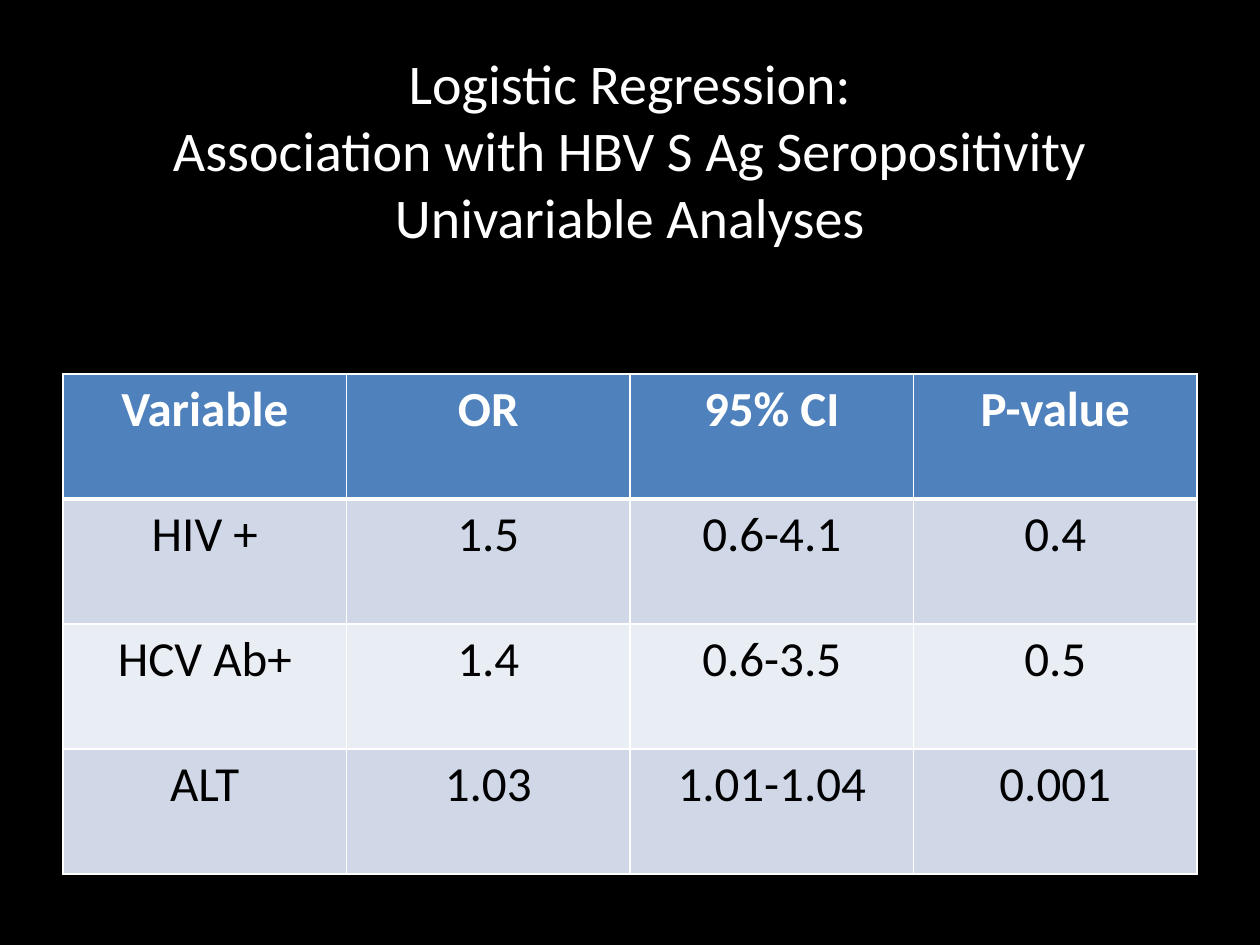
"""Build a slide with a table of univariable logistic regression results."""
import pptx
import pptx.dml.color
import pptx.enum.text
import pptx.oxml
import pptx.oxml.ns
import pptx.util

PX = 914400 / 126
ALIGN = pptx.enum.text.PP_ALIGN
ANCHOR = pptx.enum.text.MSO_ANCHOR


def px(n):
    return pptx.util.Emu(round(n * PX))


def rgb(value):
    return pptx.dml.color.RGBColor.from_string(value)


class Deck:
    font = "Calibri"
    white, black = "FFFFFF", "000000"
    header, bands = "4F81BD", ("D0D8E8", "E9EDF4")

    def __init__(self, width, height):
        self.prs = pptx.Presentation()
        self.prs.slide_width, self.prs.slide_height = px(width), px(height)

    def slide(self):
        self.s = self.prs.slides.add_slide(self.prs.slide_layouts[5])
        fill = self.s.background.fill
        fill.solid()
        fill.fore_color.rgb = rgb(self.black)

    def text(self, tf, text, size, color, bold=False):
        tf.text = text
        for p in tf.paragraphs:
            p.alignment = ALIGN.CENTER
            for r in p.runs:
                r.font.name, r.font.size = self.font, pptx.util.Pt(size)
                r.font.bold, r.font.color.rgb = bold, rgb(color)

    def title(self, text, left, top, width, height):
        sp = self.s.shapes.title
        sp.left, sp.top, sp.width, sp.height = map(px, (left, top, width, height))
        tf = sp.text_frame
        tf.word_wrap = True
        tf.auto_size = pptx.enum.text.MSO_AUTO_SIZE.NONE
        tf.vertical_anchor = ANCHOR.TOP
        tf.margin_top = px(10)
        self.text(tf, text, 32, self.white)

    def border(self, cell, side, points):
        ns = pptx.oxml.ns.nsdecls("a")
        cell._tc.get_or_add_tcPr().append(pptx.oxml.parse_xml(
            f'<a:ln{side} {ns} w="{pptx.util.Pt(points)}"><a:solidFill>'
            f'<a:srgbClr val="{self.white}"/></a:solidFill></a:ln{side}>'))

    def cell(self, cell, text, row):
        head = row == 0
        self.text(cell.text_frame, text, 28, self.white if head else self.black, head)
        heavy = {"T": row == 1, "B": head}
        for side in "LRTB":
            self.border(cell, side, 3 if heavy.get(side) else 1)
        cell.fill.solid()
        cell.fill.fore_color.rgb = rgb(self.header if head else self.bands[(row - 1) % 2])

    def table(self, rows, left, top, width, height):
        frame = self.s.shapes.add_table(
            len(rows), len(rows[0]), *map(px, (left, top, width, height)))
        for i, row in enumerate(rows):
            for j, text in enumerate(row):
                self.cell(frame.table.cell(i, j), text, i)


def main():
    deck = Deck(1260, 945)
    deck.slide()
    deck.title("Logistic Regression:\vAssociation with HBV S Ag Seropositivity\v"
               "Univariable Analyses", 63, 38, 1134, 158)
    deck.table([
        ("Variable", "OR", "95% CI", "P-value"),
        ("HIV +", "1.5", "0.6-4.1", "0.4"),
        ("HCV Ab+", "1.4", "0.6-3.5", "0.5"),
        ("ALT", "1.03", "1.01-1.04", "0.001"),
    ], 63, 374, 1134, 500)
    deck.prs.save("out.pptx")


if __name__ == "__main__":
    main()
